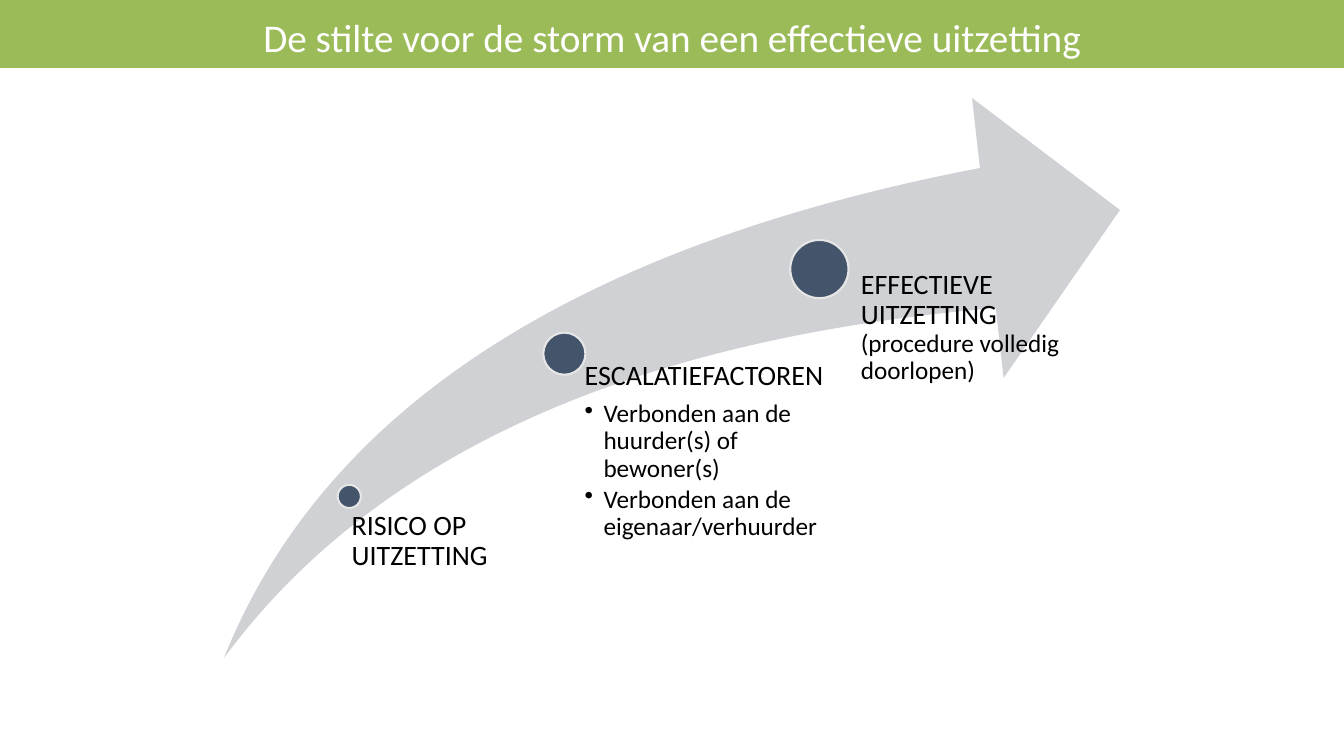
from pptx import Presentation
from pptx.dml.color import RGBColor
from pptx.enum import shapes, text
from pptx.oxml import parse_xml
from pptx.oxml.ns import nsdecls
from pptx.util import Pt

FONT = "Calibri"
COLORS = {
    "band": "9BBB59",
    "page": "FFFFFF",
    "arrow": "CFD1D4",
    "dot": "44546A",
    "rim": "E7E6E6",
    "title": "FFFFFF",
    "body": "000000",
}
HEADING, DETAIL = 20, 18

# Each stage: dot (left, top, diameter), label (left, top, width, height), inset,
# heading, detail on the same line, bullets
STAGES = [
    ((241.2, 346.3, 16.6), (242.6, 365, 175.7, 115.9), 8.6,
     "RISICO OP UITZETTING", "", []),
    ((388.1, 237.6, 30.1), (401.8, 257.8, 186.5, 217.4), 15.8,
     "ESCALATIEFACTOREN", "",
     ["Verbonden aan de huurder(s) of bewoner(s)",
      "Verbonden aan de eigenaar/verhuurder"]),
    ((564.5, 171.4, 41.6), (592.6, 193, 180, 277.9), 22.3,
     "EFFECTIEVE UITZETTING ", "(procedure volledig doorlopen)", []),
]


def rgb(name):
    return RGBColor.from_string(COLORS[name])


def paint_background(slide):
    """Green band over a white page, as a gradient with a hard edge."""
    fill = slide.background.fill
    fill.gradient()
    fill.gradient_angle = 270
    for stop, name in zip(fill.gradient_stops, ("band", "page")):
        stop.position = 0.09
        stop.color.rgb = rgb(name)


def add_filled(slide, preset, box, color, rim=None):
    figure = slide.shapes.add_shape(preset, *map(Pt, box))
    figure.shadow.inherit = False
    figure.fill.solid()
    figure.fill.fore_color.rgb = rgb(color)
    if rim:
        figure.line.color.rgb = rgb(rim)
        figure.line.width = Pt(1.5)
    else:
        figure.line.fill.background()
    return figure


def add_frame(slide, box):
    frame = slide.shapes.add_textbox(*map(Pt, box)).text_frame
    frame.word_wrap = True
    return frame


def style_run(run, size, color):
    run.font.name = FONT
    run.font.size = Pt(size)
    run.font.color.rgb = rgb(color)


def make_bullet(paragraph):
    props = paragraph._p.get_or_add_pPr()
    props.set("marL", str(Pt(13.5)))
    props.set("indent", str(-Pt(13.5)))
    props.append(parse_xml(f'<a:buChar {nsdecls("a")} char="•"/>'))


def add_title(slide, wording):
    frame = add_frame(slide, (0, 0, 960, 56.9))
    frame.vertical_anchor = text.MSO_ANCHOR.MIDDLE
    frame.text = wording
    title = frame.paragraphs[0]
    title.alignment = text.PP_ALIGN.CENTER
    title.line_spacing = 0.9
    style_run(title.runs[0], 28, "title")


def add_label(slide, box, inset, heading, detail, bullets):
    frame = add_frame(slide, box)
    frame.margin_left = Pt(inset)
    frame.margin_top = frame.margin_right = frame.margin_bottom = 0
    frame.text = heading
    first = frame.paragraphs[0]
    first.line_spacing = 0.9
    first.space_after = Pt(0.35 * HEADING)
    style_run(first.runs[0], HEADING, "body")
    if detail:
        extra = first.add_run()
        extra.text = detail
        style_run(extra, DETAIL, "body")
    for wording in bullets:
        item = frame.add_paragraph()
        item.text = wording
        item.level = 1
        item.line_spacing = 0.9
        item.space_after = Pt(0.15 * DETAIL)
        make_bullet(item)
        style_run(item.runs[0], DETAIL, "body")


def main():
    deck = Presentation()
    deck.slide_width, deck.slide_height = Pt(960), Pt(540)
    slide = deck.slides.add_slide(deck.slide_layouts[6])
    paint_background(slide)

    # Rising arrow
    arrow = add_filled(slide, shapes.MSO_SHAPE.SWOOSH_ARROW,
                       (160, 70, 640, 400), "arrow")
    arrow.adjustments[0] = arrow.adjustments[1] = 0.25

    # Stages along the arrow
    for (left, top, size), box, inset, heading, detail, bullets in STAGES:
        add_filled(slide, shapes.MSO_SHAPE.OVAL, (left, top, size, size), "dot", "rim")
        add_label(slide, box, inset, heading, detail, bullets)

    add_title(slide, "De stilte voor de storm van een effectieve uitzetting")
    deck.save("out.pptx")


if __name__ == "__main__":
    main()
